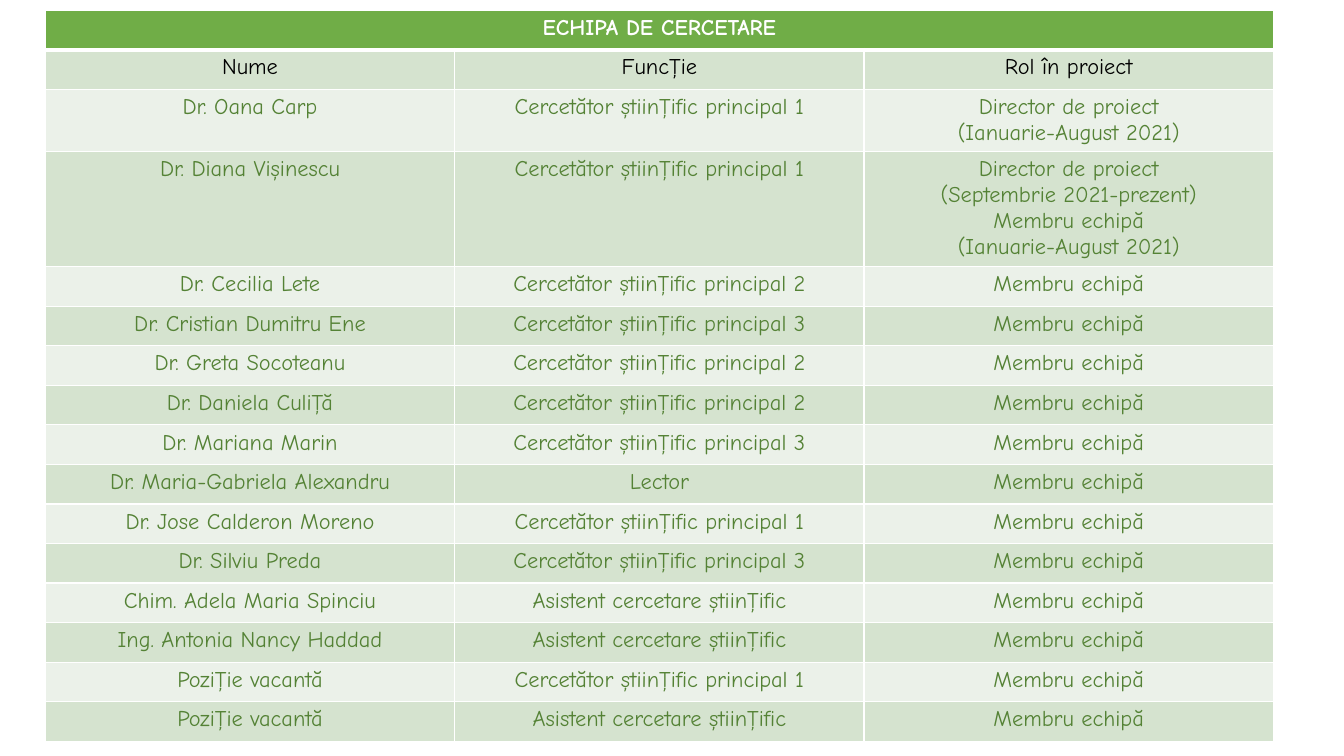
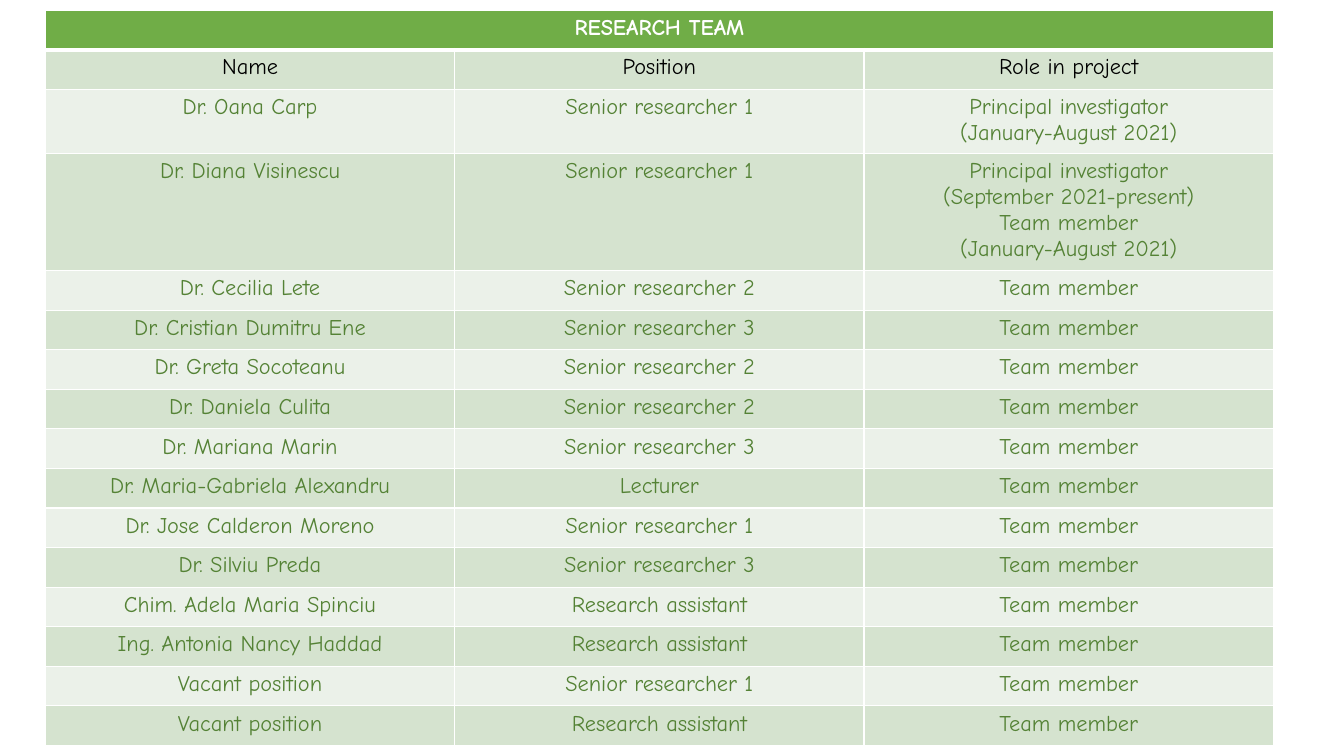
from lxml.etree import SubElement
from pptx import Presentation
from pptx.dml.color import RGBColor
from pptx.enum.text import PP_ALIGN as Align
from pptx.oxml.ns import qn
from pptx.util import Inches, Pt

FONT, TEXT_SIZE = "Comic Neue", 16
WHITE, BLACK, GREEN, DARK_GREEN = "FFFFFF", "000000", "70AD47", "548235"
BANDS = "D5E3CF", "EBF1E9"
LEFT, TOP, COLUMN_WIDTH = 0.45, 0.1, 4.06
SINGLE_ROW = 5.5 / 14
THIN, THICK = 1, 3

TEAMS = [
    {
        "title": "ECHIPA DE CERCETARE",
        "headings": ("Nume", "Funcţie", "Rol în proiect"),
        "tall_rows": {2: 0.62, 4: 1.14},
        "researcher": "Cercetător știinţific principal",
        "assistant": "Asistent cercetare știinţific",
        "lecturer": "Lector",
        "member": "Membru echipă",
        "leaders": {
            "Dr. Oana Carp": ["Director de proiect", "(Ianuarie-August 2021)"],
            "Dr. Diana Vișinescu": [
                "Director de proiect", "(Septembrie 2021-prezent)",
                "Membru echipă", "(Ianuarie-August 2021)",
            ],
        },
        "culita": "Dr. Daniela Culiţă",
        "vacant": "Poziţie vacantă",
    },
    {
        "title": "RESEARCH TEAM",
        "headings": ("Name", "Position", "Role in project"),
        "tall_rows": {2: 0.64, 4: 1.16},
        "researcher": "Senior researcher",
        "assistant": "Research assistant",
        "lecturer": "Lecturer",
        "member": "Team member",
        "leaders": {
            "Dr. Oana Carp": ["Principal investigator", "(January-August 2021)"],
            "Dr. Diana Visinescu": [
                "Principal investigator", "(September 2021-present)",
                "Team member", "(January-August 2021)",
            ],
        },
        "culita": "Dr. Daniela Culita",
        "vacant": "Vacant position",
    },
]


def color(value):
    return RGBColor.from_string(value)


def team_rows(team):
    first, second, third = (f"{team['researcher']} {level}" for level in (1, 2, 3))
    assistant = team["assistant"]
    members = [
        ("Dr. Cecilia Lete", second),
        ("Dr. Cristian Dumitru Ene", third),
        ("Dr. Greta Socoteanu", second),
        (team["culita"], second),
        ("Dr. Mariana Marin", third),
        ("Dr. Maria-Gabriela Alexandru", team["lecturer"]),
        ("Dr. Jose Calderon Moreno", first),
        ("Dr. Silviu Preda", third),
        ("Chim. Adela Maria Spinciu", assistant),
        ("Ing. Antonia Nancy Haddad", assistant),
        (team["vacant"], first),
        (team["vacant"], assistant),
    ]
    leaders = [([name], [first], roles) for name, roles in team["leaders"].items()]
    return leaders + [([name], [position], [team["member"]]) for name, position in members]


def add_borders(cell, row):
    properties = cell._tc.get_or_add_tcPr()
    widths = {
        "L": THIN,
        "R": THIN,
        "T": THICK if row == 1 else THIN,
        "B": THICK if row == 0 else THIN,
    }
    for side, width in widths.items():
        line = SubElement(properties, qn(f"a:ln{side}"), w=str(Pt(width)))
        fill = SubElement(line, qn("a:solidFill"))
        SubElement(fill, qn("a:srgbClr"), val=WHITE)


def style_cell(cell, row, fill):
    add_borders(cell, row)
    cell.fill.solid()
    cell.fill.fore_color.rgb = color(fill)


def write_cell(cell, lines, text_color, bold=False):
    frame = cell.text_frame
    for index, line in enumerate(lines):
        para = frame.add_paragraph() if index else frame.paragraphs[0]
        para.alignment = Align.CENTER
        span = para.add_run()
        span.text = line
        span.font.name = FONT
        span.font.size = Pt(TEXT_SIZE)
        span.font.bold = bold
        span.font.color.rgb = color(text_color)


def add_team(deck, team):
    page = deck.slides.add_slide(deck.slide_layouts[6])
    headings = [[heading] for heading in team["headings"]]
    body = [headings] + team_rows(team)
    columns = len(headings)
    line_counts = [1] + [max(map(len, cells)) for cells in body]
    heights = [team["tall_rows"].get(count, SINGLE_ROW) for count in line_counts]
    table = page.shapes.add_table(
        len(heights), columns, Inches(LEFT), Inches(TOP),
        Inches(COLUMN_WIDTH * columns), Inches(sum(heights)),
    ).table
    table.first_row = table.horz_banding = False
    for column in table.columns:
        column.width = Inches(COLUMN_WIDTH)
    for row, height in zip(table.rows, heights):
        row.height = Inches(height)

    for column in range(columns):
        style_cell(table.cell(0, column), 0, GREEN)
    table.cell(0, 0).merge(table.cell(0, columns - 1))
    write_cell(table.cell(0, 0), [team["title"]], WHITE, bold=True)

    for row, cells in enumerate(body, start=1):
        for column, lines in enumerate(cells):
            cell = table.cell(row, column)
            style_cell(cell, row, BANDS[(row - 1) % 2])
            write_cell(cell, lines, BLACK if row == 1 else DARK_GREEN)


def main():
    deck = Presentation()
    deck.slide_width, deck.slide_height = Inches(13.33), Inches(7.5)
    for team in TEAMS:
        add_team(deck, team)
    deck.save("out.pptx")


if __name__ == "__main__":
    main()
